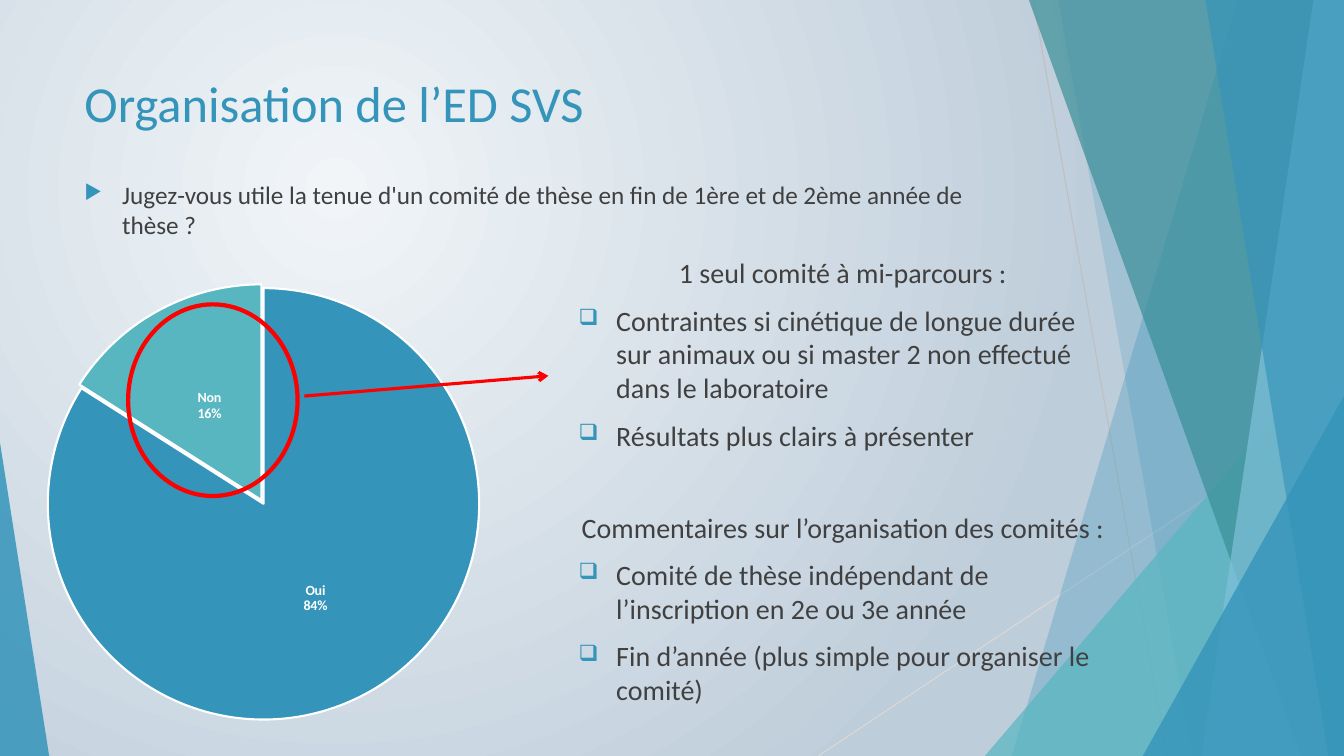
from dataclasses import dataclass

from lxml.etree import SubElement as Sub
from pptx import Presentation
from pptx.chart.data import CategoryChartData as Data
from pptx.dml.color import RGBColor as RGB
from pptx.enum.chart import XL_CHART_TYPE as Kind, XL_LABEL_POSITION as Spot
from pptx.enum.shapes import MSO_CONNECTOR as Link, MSO_SHAPE as Form
from pptx.enum.text import PP_ALIGN as Align
from pptx.oxml.ns import qn
from pptx.util import Cm, Pt

WIDE, HIGH = 33.87, 19.05


@dataclass(frozen=True)
class Theme:
    font: str = "Calibri"
    blue: str = "3494BA"
    teal: str = "58B6C0"
    deep: str = "3A8F98"
    pale: str = "7FC1DB"
    text: str = "404040"
    white: str = "FFFFFF"
    red: str = "FF0000"
    glow: str = "F1F5F8"
    mist: str = "BECDDA"
    head: int = 36
    lead: int = 18
    body: int = 20
    label: int = 10


LOOK = Theme()


@dataclass(frozen=True)
class Box:
    left: float
    top: float
    width: float
    height: float

    def spans(self) -> tuple:
        return Cm(self.left), Cm(self.top), Cm(self.width), Cm(self.height)


@dataclass(frozen=True)
class Pane:
    """Band reaching the right edge, with a slanted left side."""
    top: float
    foot: float
    color: str
    alpha: int


@dataclass(frozen=True)
class Wedge:
    box: Box
    tip: float
    color: str
    alpha: int


@dataclass(frozen=True)
class Rule:
    start: tuple
    end: tuple
    color: str
    width: float
    arrow: bool = False


@dataclass(frozen=True)
class Note:
    top: float
    head: str
    items: tuple


RULES = (
    Rule((26.04, 0), (29.41, HIGH), "BFBFBF", 0.75),
    Rule((WIDE, 10.24), (20.62, HIGH), "D9D9D9", 0.75),
)
DECOR = (
    Pane(31.19, 25.5, LOOK.blue, 30),
    Pane(26.67, 30.05, LOOK.blue, 20),
    Wedge(Box(24.82, 8.46, 9.05, 10.59), 1, LOOK.teal, 72),
    Pane(25.93, 32.79, LOOK.deep, 70),
    Pane(33.1, 30.28, LOOK.pale, 70),
    Pane(30.38, 33.48, LOOK.blue, 65),
    Wedge(Box(28.8, 9.98, 5.07, 9.07), 1, LOOK.blue, 80),
    Wedge(Box(0, 11.15, 1.24, 7.9), 0, LOOK.blue, 85),
)
NOTES = (
    Note(6.32, "1 seul comité à mi-parcours :", (
        "Contraintes si cinétique de longue durée sur animaux "
        "ou si master 2 non effectué dans le laboratoire",
        "Résultats plus clairs à présenter")),
    Note(12.73, "Commentaires sur l’organisation des comités :", (
        "Comité de thèse indépendant de l’inscription en 2e ou 3e année",
        "Fin d’année (plus simple pour organiser le comité)")),
)


def rgb(color: str) -> RGB:
    return RGB.from_string(color)


def paint_back(slide) -> None:
    fill = slide.background.fill
    fill.gradient()
    for stop, color in zip(fill.gradient_stops, (LOOK.glow, LOOK.mist)):
        stop.color.rgb = rgb(color)
    grad = next(slide.element.iter(qn("a:gradFill")))
    grad.remove(grad.find(qn("a:lin")))
    ring = Sub(grad, qn("a:path"), path="circle")
    Sub(ring, qn("a:fillToRect"), l="50000", t="50000", r="100000", b="100000")


def draw_rule(slide, rule: Rule) -> None:
    ends = [Cm(value) for value in rule.start + rule.end]
    link = slide.shapes.add_connector(Link.STRAIGHT, *ends)
    link.line.color.rgb = rgb(rule.color)
    link.line.width = Pt(rule.width)
    props = link.element.spPr
    if rule.arrow:
        Sub(props.find(qn("a:ln")), qn("a:tailEnd"), type="arrow")
    Sub(props, qn("a:effectLst"))


def draw_decor(slide, part: Pane | Wedge) -> None:
    if isinstance(part, Pane):
        pen = slide.shapes.build_freeform(Cm(part.top), 0)
        pen.add_line_segments([(Cm(x), Cm(y)) for x, y in (
            (WIDE, 0), (WIDE, HIGH), (part.foot, HIGH))])
        shape = pen.convert_to_shape()
    else:
        shape = slide.shapes.add_shape(Form.ISOSCELES_TRIANGLE, *part.box.spans())
        shape.adjustments[0] = part.tip
    shape.shadow.inherit = False
    shape.line.fill.background()
    shape.fill.solid()
    shape.fill.fore_color.rgb = rgb(part.color)
    tint = shape.element.spPr.find(qn("a:solidFill"))[0]
    Sub(tint, qn("a:alpha"), val=str(part.alpha * 1000))


def add_frame(slide, box: Box):
    frame = slide.shapes.add_textbox(*box.spans()).text_frame
    frame.word_wrap = True
    return frame


def write(frame, text: str, *, size: int, color: str = LOOK.text,
          mark: str = "", align: Align = Align.LEFT, gap: int = 10) -> None:
    """Fill the empty first paragraph, or add one; mark is the bullet."""
    first = frame.paragraphs[0]
    para = frame.add_paragraph() if first.runs else first
    para.alignment = align
    para.space_before = Pt(gap)
    run = para.add_run()
    run.text = text
    run.font.name = LOOK.font
    run.font.size = Pt(size)
    run.font.color.rgb = rgb(color)
    if mark:
        props = para._p.get_or_add_pPr()
        props.set("marL", str(Cm(0.95)))
        props.set("indent", str(-Cm(0.95)))
        Sub(Sub(props, qn("a:buClr")), qn("a:srgbClr"), val=LOOK.blue)
        Sub(props, qn("a:buSzPct"), val="80000")
        Sub(props, qn("a:buChar"), char=mark)


def draw_pie(slide, box: Box) -> None:
    data = Data(number_format="0%")
    data.categories = ["Oui", "Non"]
    data.add_series("Series 1", [0.84, 0.16])
    chart = slide.shapes.add_chart(Kind.PIE, *box.spans(), data).chart
    chart.has_title = chart.has_legend = False
    chart.font.name, chart.font.size = LOOK.font, Pt(LOOK.label)
    plot = chart.plots[0]
    plot.vary_by_categories = True
    pie = plot.series[0]
    for spot, color in enumerate((LOOK.blue, LOOK.teal)):
        look = pie.points[spot].format
        look.fill.solid()
        look.fill.fore_color.rgb = rgb(color)
        look.line.color.rgb = rgb(LOOK.white)
        look.line.width = Pt(1.5)
    pie.format.line.color.rgb = rgb(LOOK.white)
    root = pie._element
    split = Sub(root, qn("c:explosion"), val="1")
    root.find(qn("c:spPr")).addnext(split)

    tags = pie.data_labels
    tags.show_category_name = tags.show_value = True
    tags.number_format, tags.number_format_is_linked = "0%", False
    tags.position = Spot.CENTER
    tags.font.name, tags.font.size, tags.font.bold = LOOK.font, Pt(LOOK.label), True
    tags.font.color.rgb = rgb(LOOK.white)
    node = root.find(qn("c:dLbls"))
    mark = Sub(node, qn("c:separator"))
    mark.text = "\n"
    node.find(qn("c:showBubbleSize")).addnext(mark)


def main() -> None:
    deck = Presentation()
    deck.slide_width, deck.slide_height = Cm(WIDE), Cm(HIGH)
    slide = deck.slides.add_slide(deck.slide_layouts[6])
    paint_back(slide)
    for rule in RULES:
        draw_rule(slide, rule)
    for part in DECOR:
        draw_decor(slide, part)

    write(add_frame(slide, Box(1.88, 1.7, 23.88, 3.66)),
          "Organisation de l’ED SVS", size=LOOK.head, color=LOOK.blue, gap=0)
    write(add_frame(slide, Box(1.88, 4.39, 23.88, 1.93)),
          "Jugez-vous utile la tenue d'un comité de thèse en fin de 1ère "
          "et de 2ème année de thèse ?", size=LOOK.lead, mark="▶")
    draw_pie(slide, Box(0.33, 6.81, 12.57, 11.68))
    for note in NOTES:
        frame = add_frame(slide, Box(14.33, note.top, 13.82, 5.31))
        write(frame, note.head, size=LOOK.body, align=Align.CENTER)
        for item in note.items:
            write(frame, item, size=LOOK.body, mark="❑")

    ring = slide.shapes.add_shape(Form.OVAL, *Box(3.23, 7.67, 4.27, 4.83).spans())
    ring.shadow.inherit = False
    ring.fill.background()
    ring.line.color.rgb = rgb(LOOK.red)
    ring.line.width = Pt(3)
    draw_rule(slide, Rule((7.67, 9.98), (13.82, 9.47), LOOK.red, 2.25, True))
    deck.save("out.pptx")


if __name__ == "__main__":
    main()
